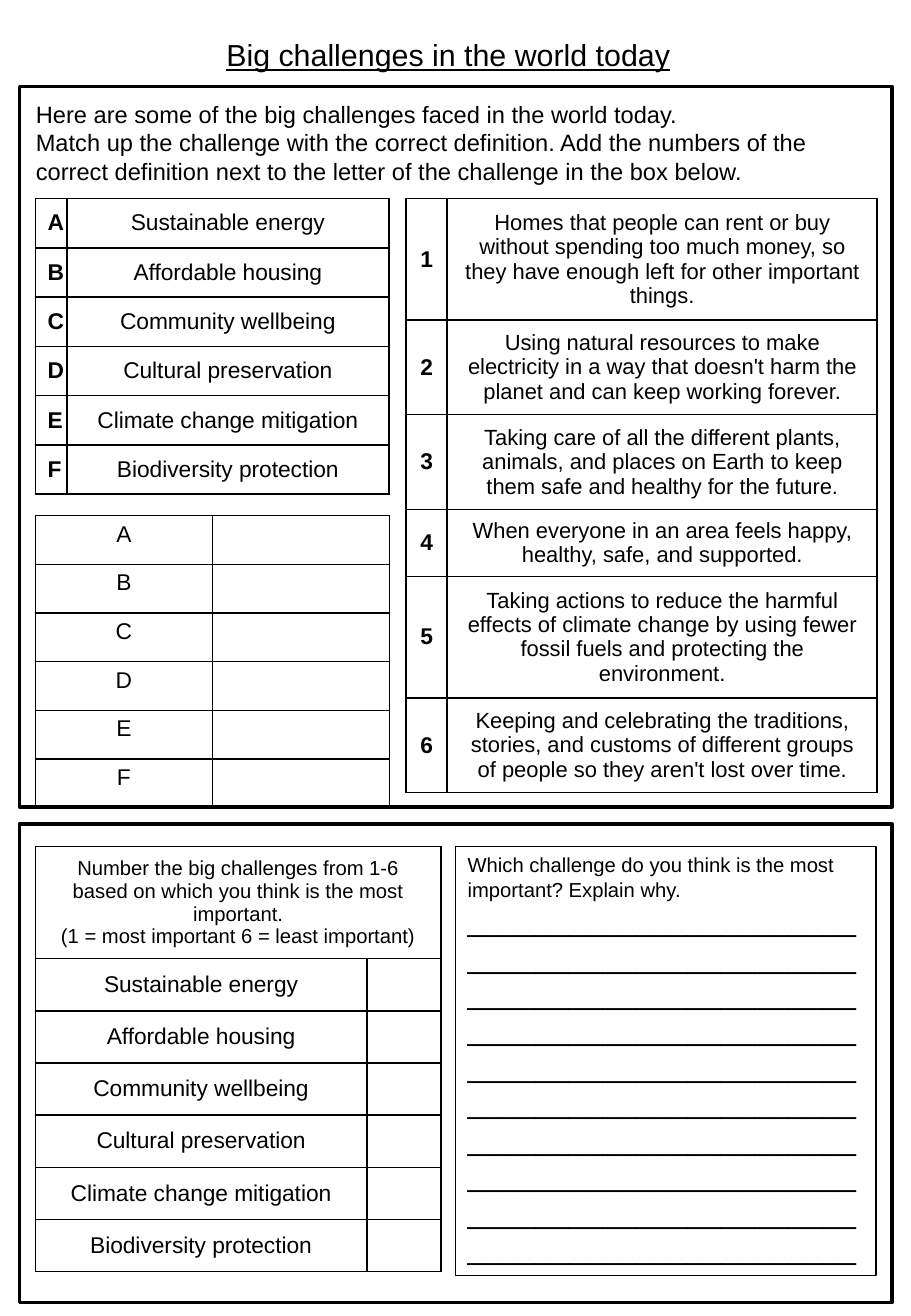
from dataclasses import dataclass

from lxml import etree
from pptx import Presentation
from pptx import util as u
from pptx.dml.color import RGBColor
from pptx.enum import shapes, text
from pptx.oxml import ns

BLACK = RGBColor(0x00, 0x00, 0x00)
FONT = "Arial"
LEFT, CENTER = text.PP_ALIGN.LEFT, text.PP_ALIGN.CENTER
TOP, MIDDLE = text.MSO_ANCHOR.TOP, text.MSO_ANCHOR.MIDDLE

CHALLENGES = [
    "Sustainable energy",
    "Affordable housing",
    "Community wellbeing",
    "Cultural preservation",
    "Climate change mitigation",
    "Biodiversity protection",
]
DEFINITIONS = [
    "Homes that people can rent or buy without spending too much money, "
    "so they have enough left for other important things.",
    "Using natural resources to make electricity in a way that doesn't harm "
    "the planet and can keep working forever.",
    "Taking care of all the different plants, animals, and places on Earth "
    "to keep them safe and healthy for the future.",
    "When everyone in an area feels happy, healthy, safe, and supported.",
    "Taking actions to reduce the harmful effects of climate change by using "
    "fewer fossil fuels and protecting the environment.",
    "Keeping and celebrating the traditions, stories, and customs of different "
    "groups of people so they aren't lost over time.",
]
RANKING_TASK = [
    "Number the big challenges from 1-6 based on which you think is the most important.",
    "(1 = most important 6 = least important)",
]
INTRO = [
    "Here are some of the big challenges faced in the world today.",
    "Match up the challenge with the correct definition. Add the numbers of the "
    "correct definition next to the letter of the challenge in the box below.",
]
QUESTION = "Which challenge do you think is the most important? Explain why."
ANSWER_LINES, MARKS_PER_LINE = 10, 23


@dataclass
class Box:
    """Position and size in centimetres."""
    left: float
    top: float
    width: float
    height: float

    def lengths(self) -> list[u.Length]:
        return [u.Cm(v) for v in (self.left, self.top, self.width, self.height)]


@dataclass
class Grid:
    """A ruled table; cols and rows are in centimetres."""
    left: float
    top: float
    cols: list[float]
    rows: list[float]
    cells: list[list[str]]
    sizes: tuple[float, float] = (13.5, 13.5)
    bold_first: bool = False
    anchor: text.MSO_ANCHOR = MIDDLE


def write(tf, *lines: str, size: float = 13.5, bold: bool = False,
          underline: bool = False, align: text.PP_ALIGN = CENTER) -> None:
    """Add each line as a paragraph, filling the empty first one."""
    for line in lines:
        p = tf.paragraphs[-1]
        if p.runs:
            p = tf.add_paragraph()
        p.alignment = align
        r = p.add_run()
        r.text = line
        r.font.name, r.font.size = FONT, u.Pt(size)
        r.font.bold, r.font.underline = bold, underline
        r.font.color.rgb = BLACK


def rule_cell(cell) -> None:
    """Give a cell black 1 pt borders and no fill."""
    tc_pr = cell._tc.get_or_add_tcPr()
    for side in ("a:lnL", "a:lnR", "a:lnT", "a:lnB"):
        ln = etree.SubElement(tc_pr, ns.qn(side), w=str(u.Pt(1)))
        fill = etree.SubElement(ln, ns.qn("a:solidFill"))
        etree.SubElement(fill, ns.qn("a:srgbClr"), val=str(BLACK))
    cell.fill.background()


def add_grid(s, grid: Grid):
    box = Box(grid.left, grid.top, sum(grid.cols), sum(grid.rows))
    table = s.shapes.add_table(len(grid.rows), len(grid.cols), *box.lengths()).table
    table.first_row = table.horz_banding = False
    for column, width in zip(table.columns, grid.cols):
        column.width = u.Cm(width)
    for row, height, words in zip(table.rows, grid.rows, grid.cells):
        row.height = u.Cm(height)
        for i, (cell, word) in enumerate(zip(row.cells, words)):
            rule_cell(cell)
            cell.vertical_anchor = grid.anchor
            if word:
                write(cell.text_frame, word, size=grid.sizes[i],
                      bold=grid.bold_first and i == 0)
    return table


def add_frame(s, box: Box, weight: float):
    sp = s.shapes.add_shape(shapes.MSO_SHAPE.RECTANGLE, *box.lengths())
    sp.shadow.inherit = False
    sp.fill.background()
    sp.line.color.rgb = BLACK
    sp.line.width = u.Pt(weight)
    return sp


def add_text_box(s, box: Box):
    tf = s.shapes.add_textbox(*box.lengths()).text_frame
    tf.word_wrap = True
    return tf


def main() -> None:
    prs = Presentation()
    prs.slide_width, prs.slide_height = u.Cm(19.05), u.Cm(27.51)
    s = prs.slides.add_slide(prs.slide_layouts[6])

    # Title and instructions
    write(add_text_box(s, Box(0.41, 0.64, 17.93, 1.02)),
          "Big challenges in the world today", size=18, underline=True)
    tf = add_text_box(s, Box(0.3, 1.96, 18.34, 1.78))
    tf.margin_left, tf.margin_right = u.Cm(0.45), u.Cm(0.28)
    write(tf, *INTRO, size=14, align=LEFT)

    # Matching task: challenges, definitions, answers
    letters = "ABCDEF"
    add_grid(s, Grid(0.74, 4.15, [0.66, 6.73], [1.03] * 6,
                     [list(pair) for pair in zip(letters, CHALLENGES)],
                     bold_first=True))
    add_grid(s, Grid(8.49, 4.15, [0.86, 8.99], [2.54, 1.98, 1.98, 1.4, 2.54, 1.98],
                     [[str(n), d] for n, d in enumerate(DEFINITIONS, 1)],
                     sizes=(13.5, 13), bold_first=True))
    add_grid(s, Grid(0.74, 10.78, [3.7, 3.7], [1.01] * 6,
                     [[letter, ""] for letter in letters], anchor=TOP))

    # Ranking task
    ranking = add_grid(s, Grid(0.74, 17.7, [6.93, 1.55], [2.34] + [1.09] * 6,
                               [["", ""]] + [[c, ""] for c in CHALLENGES]))
    heading = ranking.cell(0, 0)
    heading.merge(ranking.cell(0, 1))
    write(heading.text_frame, *RANKING_TASK, size=12)

    # Frames around the two parts
    for top, height in ((1.81, 15.06), (17.22, 10.01)):
        add_frame(s, Box(0.41, top, 18.24, height), 2.25)

    # Written answer
    tf = add_frame(s, Box(9.53, 17.7, 8.79, 8.97), 0.75).text_frame
    tf.word_wrap = True
    tf.vertical_anchor = TOP
    write(tf, QUESTION, size=12, align=LEFT)
    write(tf, "_" * (ANSWER_LINES * MARKS_PER_LINE), size=18, align=LEFT)

    prs.save("out.pptx")


if __name__ == "__main__":
    main()
